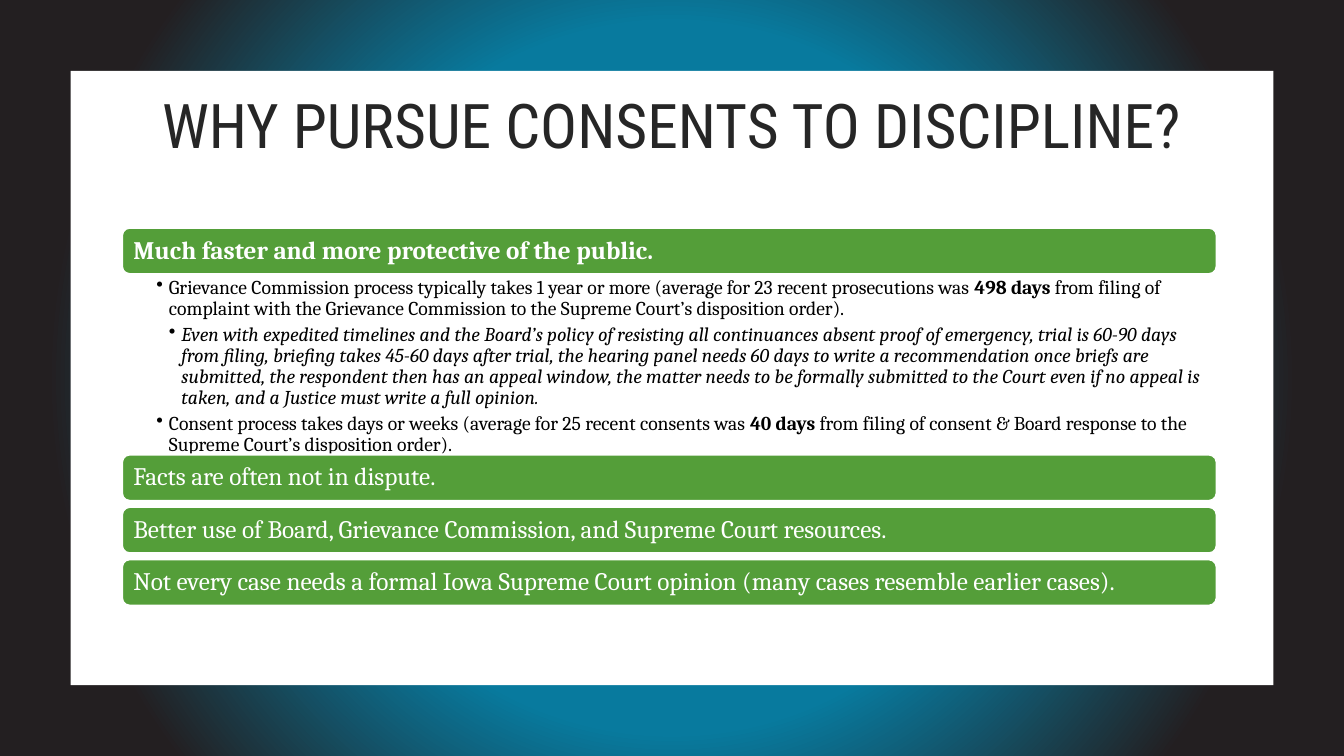
from lxml import etree
from pptx import Presentation
from pptx.dml.color import RGBColor
from pptx.enum.shapes import MSO_SHAPE
from pptx.enum.text import MSO_ANCHOR, PP_ALIGN
from pptx.oxml.ns import qn
from pptx.util import Inches, Pt

RECTANGLE = MSO_SHAPE.RECTANGLE
ROUNDED = MSO_SHAPE.ROUNDED_RECTANGLE
MIDDLE, TOP = MSO_ANCHOR.MIDDLE, MSO_ANCHOR.TOP
CENTER, LEFT = PP_ALIGN.CENTER, PP_ALIGN.LEFT

WHITE = RGBColor(0xFF, 0xFF, 0xFF)
BLACK = RGBColor(0x00, 0x00, 0x00)
CHARCOAL = RGBColor(0x26, 0x26, 0x26)
GREEN = RGBColor(0x54, 0x9E, 0x39)
TEAL = RGBColor(0x08, 0x7A, 0x9E)
DARK = RGBColor(0x23, 0x1F, 0x21)

TITLE_FONT, BODY_FONT = "Roboto Condensed", "Cambria"
WIDTH, HEIGHT = Inches(13.333), Inches(7.5)

LIST_LEFT, LIST_WIDTH = 9.08, 81.45
BAR_HEIGHT, BAR_STEP = 6.13, 6.93
FIRST_BAR_TOP, DETAILS_TOP, NEXT_BARS_TOP = 30.13, 36.27, 60.13

LEAD_REASON = "Much faster and more protective of the public."
OTHER_REASONS = [
    "Facts are often not in dispute.",
    "Better use of Board, Grievance Commission, and Supreme Court resources.",
    "Not every case needs a formal Iowa Supreme Court opinion "
    "(many cases resemble earlier cases).",
]
DETAILS = [
    (1, [
        ("Grievance Commission process typically takes 1 year or more "
         "(average for 23 recent prosecutions was ", False),
        ("498 days ", True),
        ("from filing of complaint with the Grievance Commission to the "
         "Supreme Court’s disposition order).", False),
    ]),
    (2, [
        ("Even with expedited timelines and the Board’s policy of resisting all "
         "continuances absent proof of emergency, trial is 60-90 days from filing, "
         "briefing takes 45-60 days after trial, the hearing panel needs 60 days to "
         "write a recommendation once briefs are submitted, the respondent then has "
         "an appeal window, the matter needs to be formally submitted to the Court "
         "even if no appeal is taken, and a Justice must write a full opinion.", False),
    ]),
    (1, [
        ("Consent process takes days or weeks "
         "(average for 25 recent consents was ", False),
        ("40 days ", True),
        ("from filing of consent & Board response to the "
         "Supreme Court’s disposition order).", False),
    ]),
]


def place(left, top, width, height):
    """Turn percentages of the slide into lengths."""
    return (int(WIDTH * left / 100), int(HEIGHT * top / 100),
            int(WIDTH * width / 100), int(HEIGHT * height / 100))


def add_panel(slide, kind, box, color):
    """Add a filled shape without line or shadow."""
    shape = slide.shapes.add_shape(kind, *place(*box))
    shape.shadow.inherit = False
    shape.fill.solid()
    shape.fill.fore_color.rgb = color
    shape.line.fill.background()
    return shape


def add_glow(slide):
    """Cover the slide with a circular gradient, teal in the middle."""
    shape = add_panel(slide, RECTANGLE, (0, 0, 100, 100), DARK)
    shape.fill.gradient()
    for stop, color, position in zip(shape.fill.gradient_stops, (TEAL, DARK), (0.46, 0.81)):
        stop.color.rgb = color
        stop.position = position
    gradient = shape._element.spPr.find(qn("a:gradFill"))
    gradient.remove(gradient.find(qn("a:lin")))
    circle = etree.SubElement(gradient, qn("a:path"), path="circle")
    etree.SubElement(circle, qn("a:fillToRect"), l="50000", t="50000", r="50000", b="50000")


def set_frame(text_frame, anchor, left, top, right, bottom):
    """Set wrapping, anchor and insets in inches."""
    text_frame.word_wrap = True
    text_frame.vertical_anchor = anchor
    text_frame.margin_left, text_frame.margin_right = Inches(left), Inches(right)
    text_frame.margin_top, text_frame.margin_bottom = Inches(top), Inches(bottom)


def format_run(run, font_name, size, color, bold=False, italic=False):
    """Set the font of one run."""
    font = run.font
    font.name, font.size, font.color.rgb = font_name, Pt(size), color
    font.bold, font.italic = bold, italic


def write_line(text_frame, text, align, *style):
    """Write a single paragraph in one style."""
    text_frame.text = text
    paragraph = text_frame.paragraphs[0]
    paragraph.alignment = align
    paragraph.line_spacing = 0.9
    format_run(paragraph.runs[0], *style)


def add_title(slide, text):
    """Add the centred slide title."""
    text_frame = slide.shapes.add_textbox(*place(10.55, 9.37, 78.9, 15.2)).text_frame
    set_frame(text_frame, MIDDLE, 0.1, 0.05, 0.1, 0.05)
    write_line(text_frame, text, CENTER, TITLE_FONT, 44, CHARCOAL)


def add_bar(slide, top, text, bold=False):
    """Add a green bar holding one reason."""
    bar = add_panel(slide, ROUNDED, (LIST_LEFT, top, LIST_WIDTH, BAR_HEIGHT), GREEN)
    bar.line.color.rgb = WHITE
    bar.line.width = Pt(1.5)
    set_frame(bar.text_frame, MIDDLE, 0.09, 0.07, 0.09, 0.07)
    write_line(bar.text_frame, text, LEFT, BODY_FONT, 18, WHITE, bold)


def add_details(slide, details):
    """Add the two-level bullet list, its second level in italics."""
    box = place(LIST_LEFT, DETAILS_TOP, LIST_WIDTH, NEXT_BARS_TOP - DETAILS_TOP)
    text_frame = slide.shapes.add_textbox(*box).text_frame
    set_frame(text_frame, TOP, 0.34, 0.03, 0.14, 0.03)
    for index, (level, pieces) in enumerate(details):
        paragraph = text_frame.add_paragraph() if index else text_frame.paragraphs[0]
        properties = paragraph._p.get_or_add_pPr()
        properties.set("marL", str(Inches(0.125 * level)))
        properties.set("indent", str(-Inches(0.125)))
        etree.SubElement(properties, qn("a:buChar"), char="•")
        paragraph.level = level
        paragraph.line_spacing = 0.9
        paragraph.space_after = Pt(3.2)
        for text, bold in pieces:
            run = paragraph.add_run()
            run.text = text
            format_run(run, BODY_FONT, 14, BLACK, bold, level == 2)


def main():
    """Build the slide and save it."""
    presentation = Presentation()
    presentation.slide_width, presentation.slide_height = WIDTH, HEIGHT
    slide = presentation.slides.add_slide(presentation.slide_layouts[6])
    add_glow(slide)
    add_panel(slide, RECTANGLE, (5.25, 9.37, 89.5, 81.25), WHITE)
    add_title(slide, "WHY PURSUE CONSENTS TO DISCIPLINE?")
    add_bar(slide, FIRST_BAR_TOP, LEAD_REASON, bold=True)
    add_details(slide, DETAILS)
    for index, reason in enumerate(OTHER_REASONS):
        add_bar(slide, NEXT_BARS_TOP + index * BAR_STEP, reason)
    presentation.save("out.pptx")


if __name__ == "__main__":
    main()
